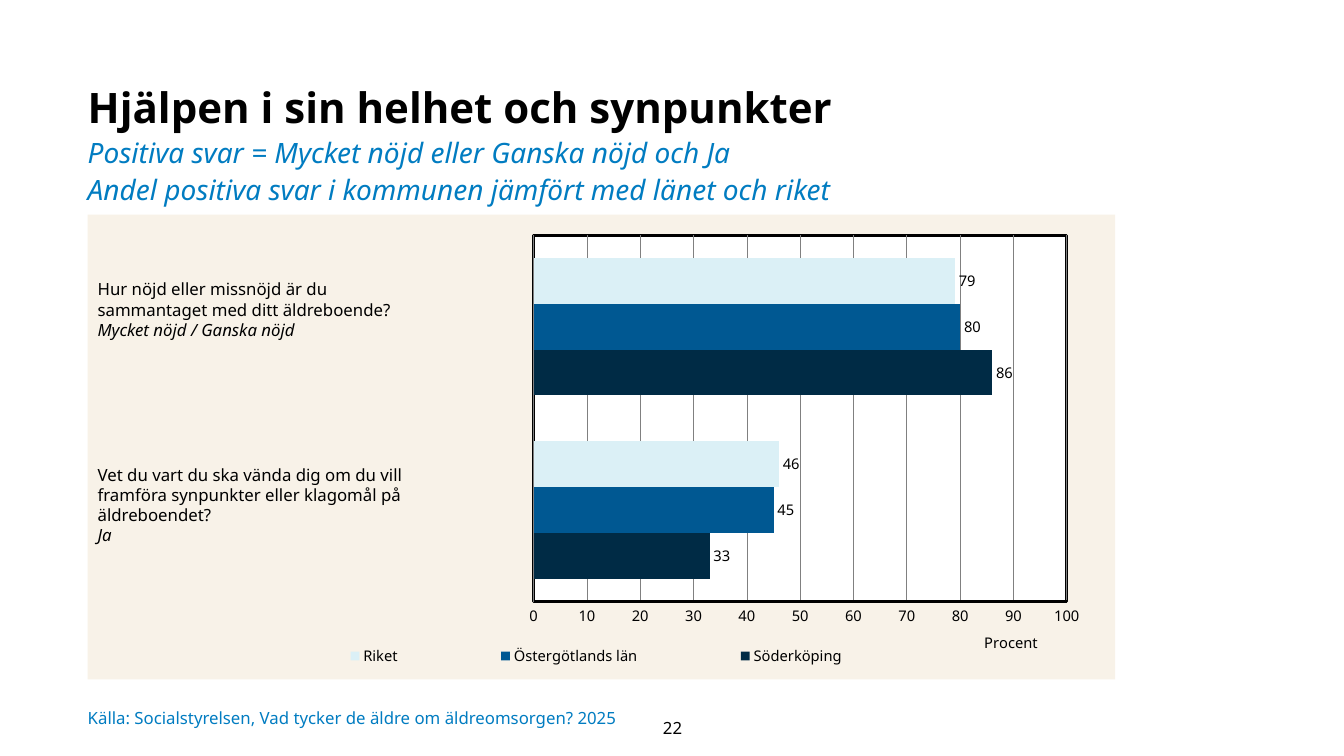
from lxml import etree
from pptx import Presentation
from pptx.chart.data import CategoryChartData
from pptx.dml.color import RGBColor
from pptx.enum.chart import (XL_CHART_TYPE as ChartType, XL_LABEL_POSITION as LabelPos,
                             XL_LEGEND_POSITION as LegendPos, XL_TICK_MARK as TickMark)
from pptx.enum.text import MSO_ANCHOR as Anchor, PP_ALIGN as Align
from pptx.oxml import parse_xml
from pptx.oxml.ns import nsdecls, qn
from pptx.util import Inches, Pt

FONT = "Noto Sans"
BLACK = RGBColor(0x00, 0x00, 0x00)
WHITE = RGBColor(0xFF, 0xFF, 0xFF)
GREY = RGBColor(0x80, 0x80, 0x80)
CREAM = RGBColor(0xF8, 0xF2, 0xE8)
BLUE = RGBColor(0x01, 0x7C, 0xC1)
NAVY = RGBColor(0x00, 0x2B, 0x45)
MID_BLUE = RGBColor(0x00, 0x58, 0x92)
PALE_BLUE = RGBColor(0xDB, 0xF0, 0xF6)

LEFT = 0.87
SERIES = [("Söderköping", (33, 86), NAVY),
          ("Östergötlands län", (45, 80), MID_BLUE),
          ("Riket", (46, 79), PALE_BLUE)]
QUESTIONS = [
    (2.72, ["Hur nöjd eller missnöjd är du", "sammantaget med ditt äldreboende?"],
     "Mycket nöjd / Ganska nöjd"),
    (4.56, ["Vet du vart du ska vända dig om du vill framföra synpunkter "
            "eller klagomål på äldreboendet?"], "Ja"),
]


def style(font, size, color=BLACK, bold=False, italic=False):
    font.name, font.size, font.bold, font.italic = FONT, Pt(size), bold, italic
    font.color.rgb = color


def add_text(s, box, lines, anchor=Anchor.TOP, inset=None, align=Align.LEFT, spacing=None):
    """Fill a text box with lines given as (text, style arguments)."""
    tf = s.shapes.add_textbox(*map(Inches, box)).text_frame
    tf.word_wrap, tf.vertical_anchor = True, anchor
    if inset is not None:
        tf.margin_left = tf.margin_right = tf.margin_top = tf.margin_bottom = Inches(inset)
    for i, (text, look) in enumerate(lines):
        p = tf.add_paragraph() if i else tf.paragraphs[0]
        p.text, p.alignment, p.line_spacing = text, align, spacing
        style(p.font, **look)


def add_heading(s, box):
    subtitle = dict(size=20, color=BLUE, italic=True)
    add_text(s, box, [
        ("Hjälpen i sin helhet och synpunkter", dict(size=30, bold=True)),
        ("Positiva svar = Mycket nöjd eller Ganska nöjd och Ja", subtitle),
        ("Andel positiva svar i kommunen jämfört med länet och riket", subtitle),
    ], inset=0, spacing=1.1)


def set_layout(element, before, inner=False, **shares):
    """Place a chart part by shares of the chart area, ahead of the first tag found in before."""
    for old in element.findall(qn("c:layout")):
        element.remove(old)
    layout = parse_xml(f"<c:layout {nsdecls('c')}><c:manualLayout/></c:layout>")
    values = {"layoutTarget": "inner"} if inner else {}
    values.update(xMode="edge", yMode="edge", **shares)
    for tag, value in values.items():
        etree.SubElement(layout[0], qn(f"c:{tag}")).set("val", str(value))
    following = next(e for e in element if e.tag in [qn(t) for t in before])
    following.addprevious(layout)


def fill_area(element, color, before=(), line=None):
    """Give the chart or plot area a fill and an optional border of 2 points."""
    border = (f'<a:ln w="{Pt(2)}"><a:solidFill><a:srgbClr val="{line}"/></a:solidFill></a:ln>'
              if line is not None else "<a:ln><a:noFill/></a:ln>")
    sp_pr = parse_xml(f'<c:spPr {nsdecls("c", "a")}><a:solidFill><a:srgbClr val="{color}"/>'
                      f'</a:solidFill>{border}</c:spPr>')
    following = next((e for e in element if e.tag in [qn(t) for t in before]), None)
    if following is None:
        element.append(sp_pr)
    else:
        following.addprevious(sp_pr)


def add_answer_chart(s, box):
    data = CategoryChartData()
    data.categories = ["1", "2"]
    for name, values, _ in SERIES:
        data.add_series(name, values)
    chart = s.shapes.add_chart(ChartType.BAR_CLUSTERED, *map(Inches, box), data).chart
    chart.has_title = False
    style(chart.font, 10.5)

    plot = chart.plots[0]
    plot.gap_width, plot.overlap, plot.vary_by_categories = 100, 0, False
    for series, (_, _, color) in zip(plot.series, SERIES):
        series.format.fill.solid()
        series.format.fill.fore_color.rgb = color
        labels = series.data_labels
        labels.show_value, labels.position = True, LabelPos.OUTSIDE_END
        style(labels.font, 10.5)

    chart.category_axis.visible = False
    axis = chart.value_axis
    axis.minimum_scale, axis.maximum_scale, axis.major_unit = 0, 100, 10
    axis.major_tick_mark = axis.minor_tick_mark = TickMark.NONE
    axis.format.line.color.rgb, axis.format.line.width = BLACK, Pt(2)
    grid = axis.major_gridlines.format.line
    grid.color.rgb, grid.width = GREY, Pt(0.5)
    style(axis.tick_labels.font, 10.5)
    title = axis.axis_title
    title.text_frame.text = "Procent"
    style(title.text_frame.paragraphs[0].font, 10.5)

    chart.has_legend = True
    legend = chart.legend
    legend.position, legend.include_in_layout = LegendPos.BOTTOM, False
    style(legend.font, 10.5)

    space = chart.element
    area = space.find(qn("c:chart")).find(qn("c:plotArea"))
    set_layout(area, ["c:barChart"], inner=True, x=0.434, y=0.044, w=0.519, h=0.789)
    set_layout(title.element if hasattr(title, "element") else axis.axis_title._element,
               ["c:overlay"], x=0.87, y=0.89)
    set_layout(legend._element, ["c:overlay"], x=0.16, y=0.92, w=0.67, h=0.06)
    fill_area(area, WHITE, line=BLACK)
    fill_area(space, CREAM, before=["c:txPr"])


def add_question(s, box, lines, answer):
    add_text(s, box, [(line, dict(size=12)) for line in lines]
             + [(answer, dict(size=12, italic=True))])


def add_footer(s, top):
    add_text(s, (LEFT, top, 5.91, 0.45),
             [("Källa: Socialstyrelsen, Vad tycker de äldre om äldreomsorgen? 2025",
               dict(size=12, color=BLUE))], anchor=Anchor.MIDDLE, inset=0)
    add_text(s, (6.16, top + 0.19, 1.02, 0.26), [("22", dict(size=12))],
             anchor=Anchor.MIDDLE, align=Align.CENTER)


def main():
    prs = Presentation()
    prs.slide_width, prs.slide_height = Inches(13.33), Inches(7.5)
    s = prs.slides.add_slide(prs.slide_layouts[6])
    add_heading(s, (LEFT, 0.76, 8.6, 1.18))
    add_answer_chart(s, (LEFT, 2.13, 10.19, 4.61))
    for top, lines, answer in QUESTIONS:
        add_question(s, (LEFT, top, 3.36, 0.9), lines, answer)
    add_footer(s, 6.9)
    prs.save("out.pptx")


if __name__ == "__main__":
    main()
